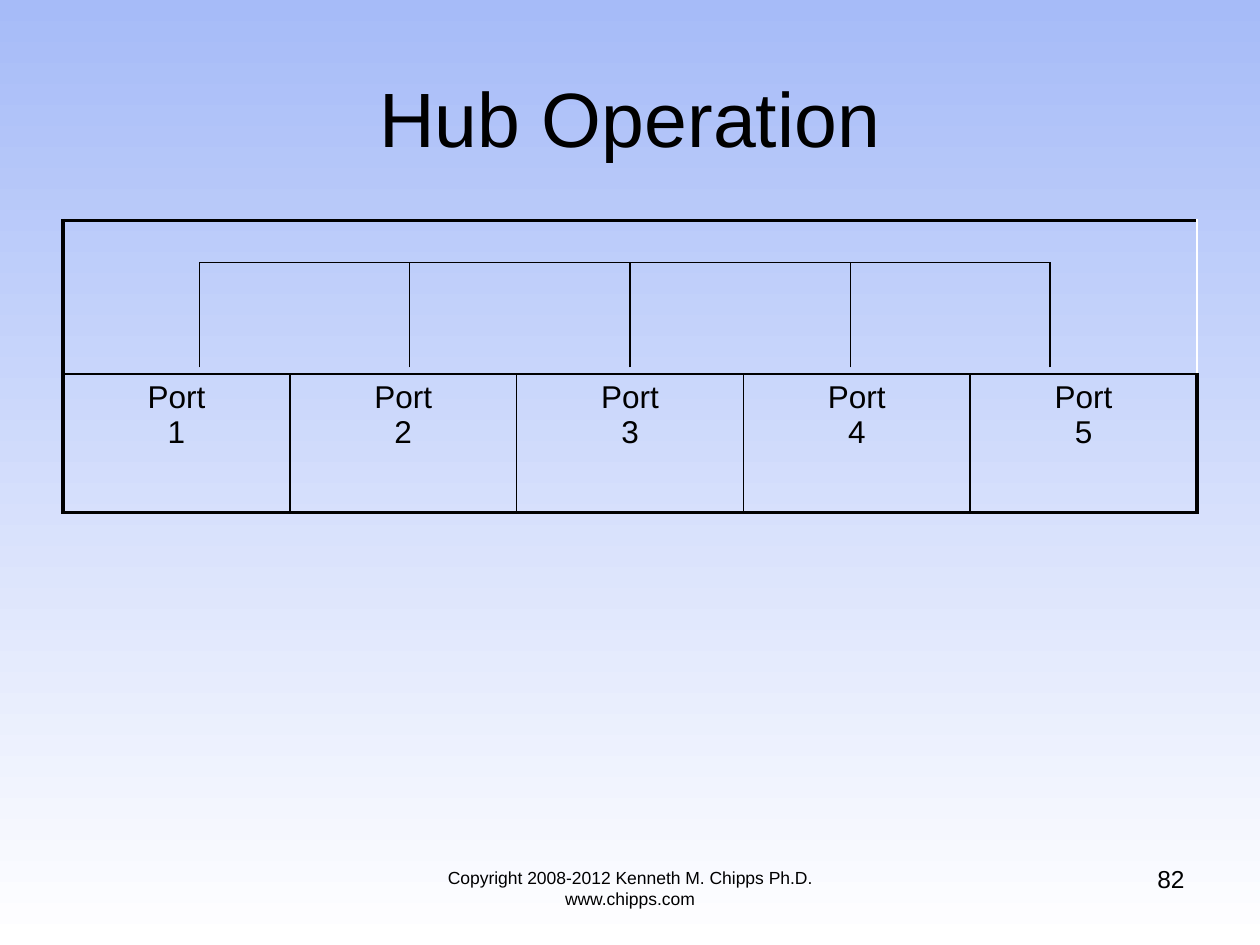
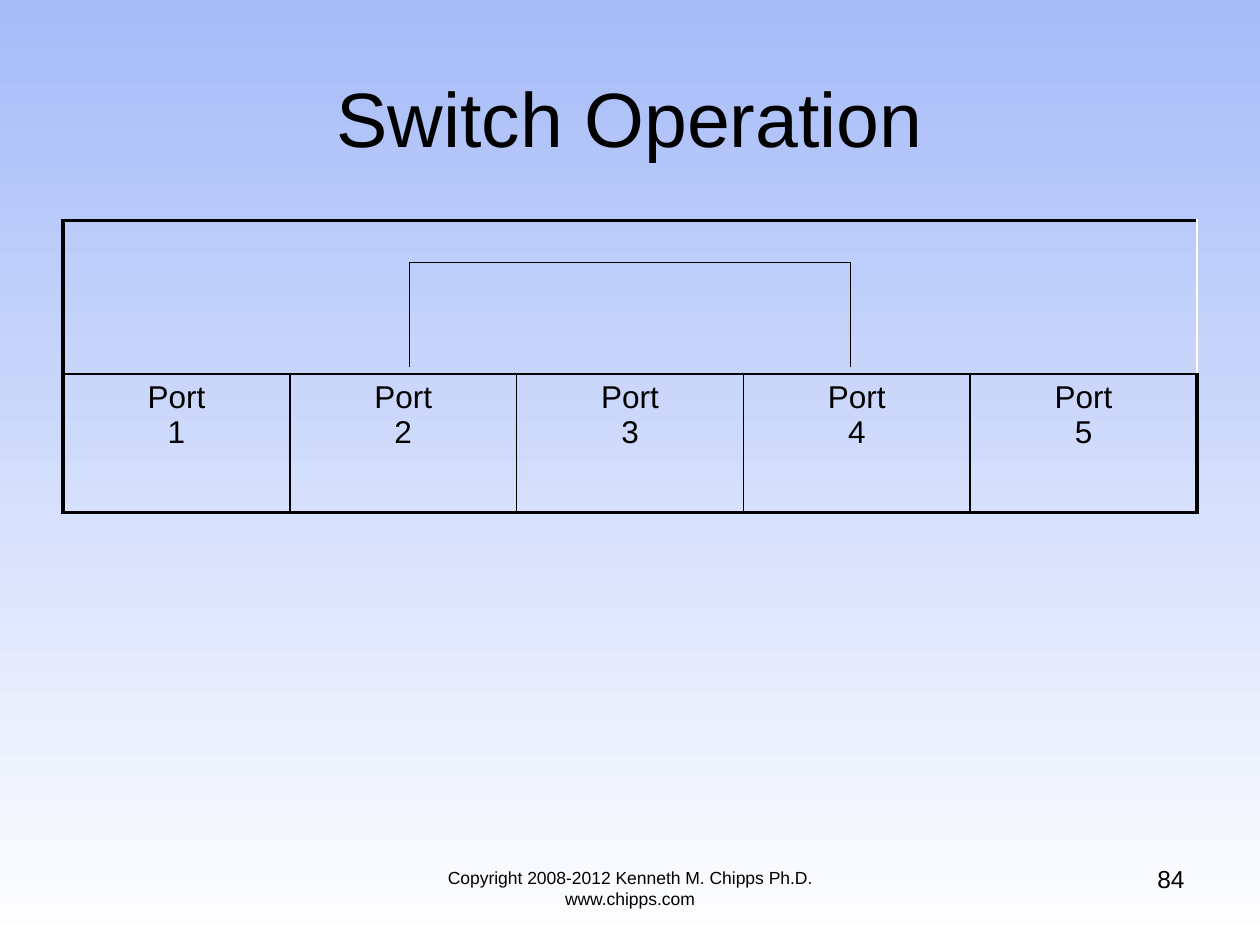
import pptx
import pptx.dml.color
import pptx.enum.shapes
import pptx.enum.text
import pptx.oxml
import pptx.oxml.ns
import pptx.util

COLORS = {"ink": "000000", "sky": "A6BBF8", "white": "FFFFFF"}
ALIGN = pptx.enum.text.PP_ALIGN
ANCHOR = pptx.enum.text.MSO_ANCHOR
FOOTER = "Copyright 2008-2012 Kenneth M. Chipps Ph.D. www.chipps.com"
GRID_COLUMNS = 120
PORT_COLUMNS = [19, 39, 60, 81, 100]
BUS_ROW, PORT_ROW = 25, 35
THIN, THICK = 1, 2.25


def rgb(name):
    return pptx.dml.color.RGBColor.from_string(COLORS[name])


class Deck:
    font = "Arial"

    def __init__(self):
        self.prs = pptx.Presentation()
        self.prs.slide_width = pptx.util.Inches(10)
        self.prs.slide_height = pptx.util.Inches(7.5)
        self.unit = self.prs.slide_width / GRID_COLUMNS
        self.s = None

    def grid(self, *cells):
        return [round(cell * self.unit) for cell in cells]

    def style(self, p, size, align):
        p.alignment = align
        p.font.name = self.font
        p.font.size = pptx.util.Pt(size)
        p.font.color.rgb = rgb("ink")

    def slide(self, title, number):
        self.s = self.prs.slides.add_slide(self.prs.slide_layouts[6])
        fill = self.s.background.fill
        fill.gradient()
        fill.gradient_angle = 270
        for stop, position, name in zip(fill.gradient_stops, (0, 1), ("sky", "white")):
            stop.position = position
            stop.color.rgb = rgb(name)
        self.text(FOOTER, (36, 82, 48, 6.2), 10)
        self.text(str(number), (86, 81.7, 28, 6.2), 14, ALIGN.RIGHT)
        self.text(title, (6, 3.6, 108, 15), 44, anchor=ANCHOR.MIDDLE)

    def text(self, text, box, size, align=ALIGN.CENTER, anchor=ANCHOR.TOP):
        tf = self.s.shapes.add_textbox(*self.grid(*box)).text_frame
        tf.word_wrap = True
        tf.vertical_anchor = anchor
        p = tf.paragraphs[0]
        p.text = text
        self.style(p, size, align)

    def border(self, cell, side, width):
        ns = pptx.oxml.ns.nsdecls("a")
        cell._tc.get_or_add_tcPr().append(pptx.oxml.parse_xml(
            f'<a:ln{side} {ns} w="{pptx.util.Pt(width)}"><a:solidFill>'
            f'<a:srgbClr val="{COLORS["ink"]}"/></a:solidFill></a:ln{side}>'))

    def port_table(self):
        count = len(PORT_COLUMNS)
        frame = self.s.shapes.add_table(2, count, *self.grid(6, 21, 108, 27.8))
        table = frame.table
        table.first_row = table.horz_banding = False
        for row, height in zip(table.rows, self.grid(14.6, 13.2)):
            row.height = height
        table.cell(0, 0).merge(table.cell(0, count - 1))
        for row in range(2):
            for column in range(count):
                cell = table.cell(row, column)
                outer = {"L": column == 0, "R": column == count - 1,
                         "T": row == 0, "B": row == 1}
                for side, is_outer in outer.items():
                    if is_outer or row == 1 or side == "B":
                        self.border(cell, side, THICK if is_outer else THIN)
                cell.fill.background()
                if row == 1:
                    cell.text = f"Port\n{column + 1}"
                    for p in cell.text_frame.paragraphs:
                        self.style(p, 18, ALIGN.CENTER)

    def line(self, *ends):
        sp = self.s.shapes.add_connector(
            pptx.enum.shapes.MSO_CONNECTOR.STRAIGHT, *self.grid(*ends))
        sp.line.color.rgb = rgb("ink")
        sp.line.width = pptx.util.Pt(0.75)
        sp._element.spPr.append(pptx.oxml.parse_xml(
            f'<a:effectLst {pptx.oxml.ns.nsdecls("a")}/>'))

    def bus(self, ports):
        columns = [PORT_COLUMNS[port - 1] for port in ports]
        self.line(columns[0], BUS_ROW, columns[-1], BUS_ROW)
        for column in columns:
            self.line(column, PORT_ROW, column, BUS_ROW)


def main():
    deck = Deck()
    for title, number, ports in (("Hub Operation", 82, (1, 2, 3, 4, 5)),
                                 ("Switch Operation", 84, (2, 4))):
        deck.slide(title, number)
        deck.port_table()
        deck.bus(ports)
    deck.prs.save("out.pptx")


if __name__ == "__main__":
    main()
